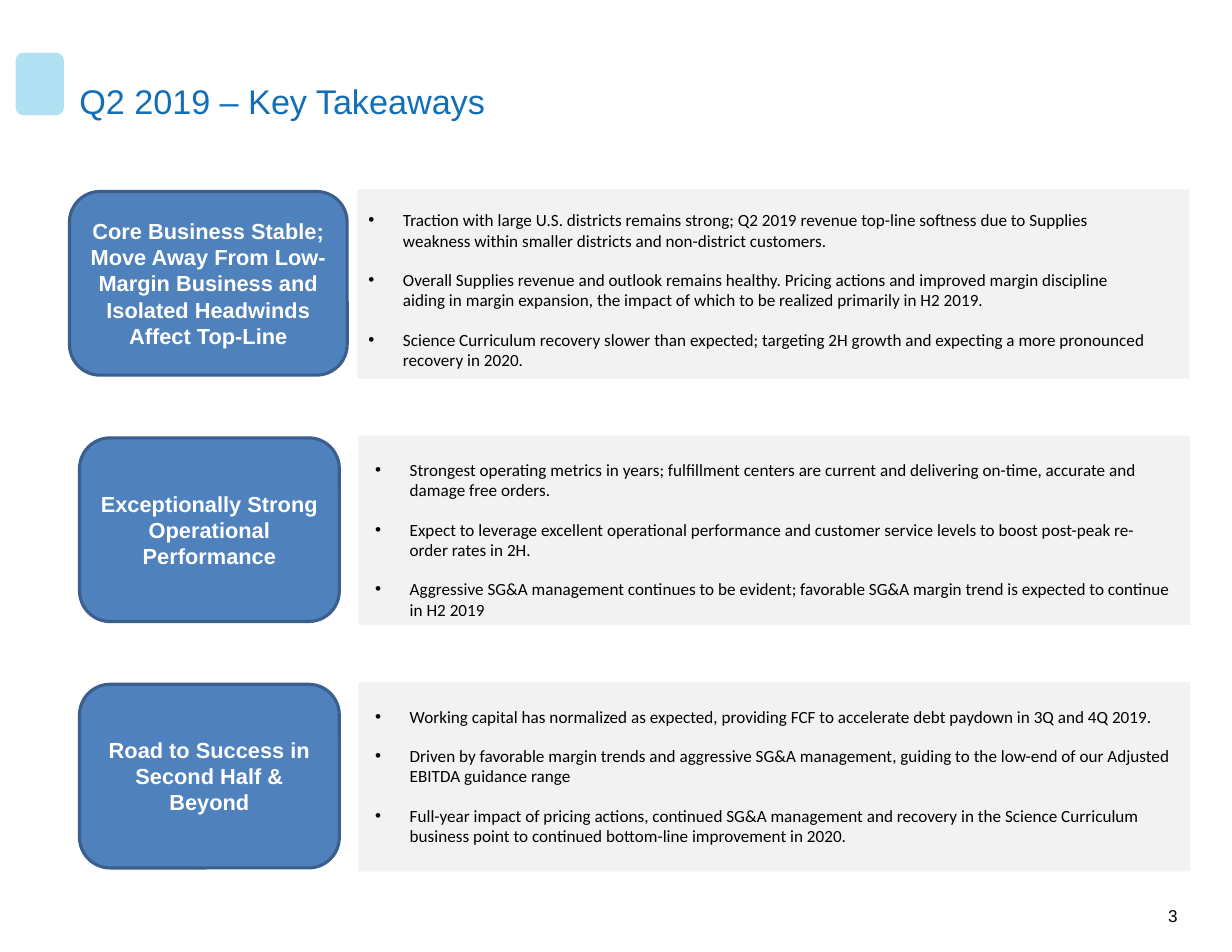
from dataclasses import dataclass

from lxml.etree import SubElement
from pptx import Presentation
from pptx.dml.color import RGBColor
from pptx.enum.shapes import MSO_SHAPE as Preset
from pptx.enum.text import MSO_ANCHOR as Anchor
from pptx.enum.text import MSO_AUTO_SIZE as AutoSize
from pptx.enum.text import PP_ALIGN as Align
from pptx.oxml.ns import qn
from pptx.shapes.autoshape import Shape
from pptx.slide import Slide
from pptx.text.text import _Paragraph as Paragraph
from pptx.util import Inches, Pt

SKY = RGBColor(0xB1, 0xE2, 0xF4)
PANEL = RGBColor(0xF2, 0xF2, 0xF2)
TITLE = RGBColor(0x12, 0x6F, 0xB7)
BADGE = RGBColor(0x4F, 0x81, 0xBD)
BADGE_EDGE = RGBColor(0x3A, 0x5F, 0x8C)
WHITE = RGBColor(0xFF, 0xFF, 0xFF)
BLACK = RGBColor(0, 0, 0)

FIRST_ROW = 1.69
ROW_PITCH = 2.2


@dataclass(frozen=True)
class Area:
    left: float
    top: float
    width: float
    height: float

    def lengths(self) -> list[Inches]:
        return [Inches(n) for n in (self.left, self.top, self.width, self.height)]


@dataclass(frozen=True)
class Takeaway:
    heading: str
    points: tuple[str, ...]
    badge_left: float
    badge_width: float
    panel_left: float
    body: Area
    anchor: Anchor = Anchor.TOP


TAKEAWAYS = (
    Takeaway(
        "Core Business Stable; Move Away From Low-Margin Business and Isolated "
        "Headwinds Affect Top-Line",
        (
            "Traction with large U.S. districts remains strong; Q2 2019 revenue top-line "
            "softness due to Supplies weakness within smaller districts and non-district "
            "customers.",
            "Overall Supplies revenue and outlook remains healthy. Pricing actions and "
            "improved margin discipline aiding in margin expansion, the impact of which "
            "to be realized primarily in H2 2019.",
            "Science Curriculum recovery slower than expected; targeting 2H growth and "
            "expecting a more pronounced recovery in 2020.",
        ),
        0.62, 2.48, 3.19, Area(3.19, 1.82, 7.14, 1.55),
    ),
    Takeaway(
        "Exceptionally Strong Operational Performance",
        (
            "Strongest operating metrics in years; fulfillment centers are current and "
            "delivering on-time, accurate and damage free orders.",
            "Expect to leverage excellent operational performance and customer service "
            "levels to boost post-peak re-order rates in 2H.",
            "Aggressive SG&A management continues to be evident; favorable SG&A margin "
            "trend is expected to continue in H2 2019",
        ),
        0.71, 2.32, 3.2, Area(3.25, 4.05, 7.32, 1.55),
    ),
    Takeaway(
        "Road to Success in Second Half & Beyond",
        (
            "Working capital has normalized as expected, providing FCF to accelerate debt "
            "paydown in 3Q and 4Q 2019.",
            "Driven by favorable margin trends and aggressive SG&A management, guiding to "
            "the low-end of our Adjusted EBITDA guidance range",
            "Full-year impact of pricing actions, continued SG&A management and recovery "
            "in the Science Curriculum business point to continued bottom-line "
            "improvement in 2020.",
        ),
        0.71, 2.32, 3.2, Area(3.25, 6.25, 7.32, 1.36), Anchor.MIDDLE,
    ),
)


def add_block(page: Slide, preset: Preset, area: Area, fill: RGBColor) -> Shape:
    block = page.shapes.add_shape(preset, *area.lengths())
    block.shadow.inherit = False
    block.fill.solid()
    block.fill.fore_color.rgb = fill
    block.line.fill.background()
    return block


def add_span(para: Paragraph, text: str, size: int, color: RGBColor,
             font: str = "Arial", bold: bool = False) -> None:
    span = para.add_run()
    span.text = text
    span.font.size = Pt(size)
    span.font.name = font
    span.font.bold = bold
    span.font.color.rgb = color


def add_text_box(page: Slide, area: Area, inset: float) -> Shape:
    box = page.shapes.add_textbox(*area.lengths())
    frame = box.text_frame
    frame.word_wrap = True
    frame.margin_left = frame.margin_right = Inches(inset)
    frame.margin_top = frame.margin_bottom = Inches(inset)
    return box


def set_bullet(para: Paragraph) -> None:
    properties = para._p.get_or_add_pPr()
    properties.set("marL", str(Inches(0.31)))
    properties.set("indent", str(Inches(-0.31)))
    color = SubElement(properties, qn("a:buClr"))
    SubElement(color, qn("a:srgbClr"), val=str(BLACK))
    SubElement(properties, qn("a:buFont"), typeface="Arial")
    SubElement(properties, qn("a:buChar"), char="•")


def add_badge(page: Slide, takeaway: Takeaway, top: float) -> None:
    area = Area(takeaway.badge_left, top, takeaway.badge_width, 1.64)
    badge = add_block(page, Preset.ROUNDED_RECTANGLE, area, BADGE)
    badge.line.color.rgb = BADGE_EDGE
    badge.line.width = Pt(2)
    frame = badge.text_frame
    frame.word_wrap = True
    frame.vertical_anchor = Anchor.MIDDLE
    para = frame.paragraphs[0]
    para.alignment = Align.CENTER
    para.space_before = para.space_after = Pt(3)
    add_span(para, takeaway.heading, 14, WHITE, bold=True)


def add_points(page: Slide, takeaway: Takeaway) -> None:
    box = page.shapes.add_textbox(*takeaway.body.lengths())
    frame = box.text_frame
    frame.word_wrap = True
    frame.auto_size = AutoSize.SHAPE_TO_FIT_TEXT
    frame.vertical_anchor = takeaway.anchor
    for index, point in enumerate(takeaway.points):
        para = frame.add_paragraph() if index else frame.paragraphs[0]
        para.space_before = para.space_after = Pt(6)
        set_bullet(para)
        add_span(para, point, 11, BLACK, font="Calibri")


def main() -> None:
    deck = Presentation()
    deck.slide_width = Inches(11)
    deck.slide_height = Inches(8.5)
    page = deck.slides.add_slide(deck.slide_layouts[6])

    accent = add_block(page, Preset.ROUNDED_RECTANGLE, Area(0.14, 0.47, 0.43, 0.56), SKY)
    accent.adjustments[0] = 0.16

    title = add_text_box(page, Area(0.61, 0.62, 9.77, 0.4), 0.1)
    add_span(title.text_frame.paragraphs[0], "Q2 2019 – Key Takeaways", 22, TITLE)

    for row, takeaway in enumerate(TAKEAWAYS):
        top = FIRST_ROW + row * ROW_PITCH
        add_block(page, Preset.RECTANGLE, Area(takeaway.panel_left, top, 7.43, 1.69), PANEL)
        add_badge(page, takeaway, top + 0.02)
        add_points(page, takeaway)

    number = add_text_box(page, Area(10.4, 8.05, 0.23, 0.2), 0)
    para = number.text_frame.paragraphs[0]
    para.line_spacing = 1.2
    para._p.get_or_add_pPr().set("marL", str(Inches(0.03)))
    add_span(para, "3", 11, BLACK)

    deck.save("out.pptx")


if __name__ == "__main__":
    main()
